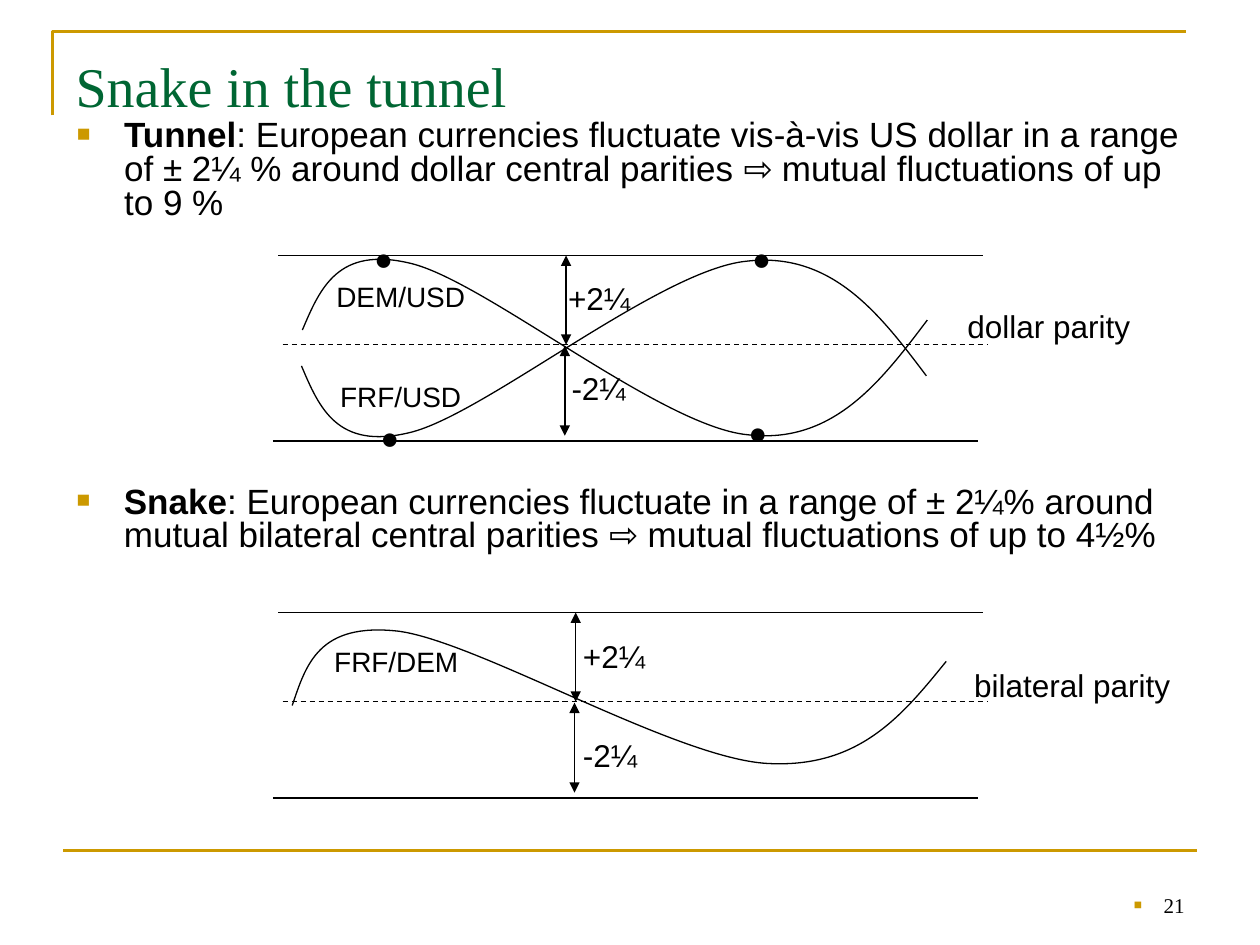
from lxml import etree
from pptx import Presentation
from pptx.dml.color import RGBColor
from pptx.enum import dml, shapes, text
from pptx.oxml.ns import qn
from pptx.util import Pt

GOLD = RGBColor(0xCC, 0x99, 0x00)
GREEN = RGBColor(0x00, 0x66, 0x33)
BLACK = RGBColor(0, 0, 0)
SANS, SERIF = "Arial", "Times New Roman"
LEFT, MID, RIGHT = text.PP_ALIGN.LEFT, text.PP_ALIGN.CENTER, text.PP_ALIGN.RIGHT
TOP, BASE = text.MSO_ANCHOR.TOP, text.MSO_ANCHOR.BOTTOM

WAVE = [(16.8, 42.6), (26.9, 18.9), (37, -5.6), (78.7, 4.5), (121.2, 14.6),
        (221.3, 97.4), (271, 102.4), (319.9, 108.2), (347.3, 72.2), (373.9, 36.9)]
FLIP = [(x - 0.5, 105.7 - y) for x, y in WAVE]
SNAKE = [(11, 53.2), (19, 29.4), (26.2, 5.7), (71.5, 10.7), (116.9, 16.5),
         (229.9, 83.4), (282.5, 86.3), (335, 89.2), (359.5, 59), (384.7, 28)]
DOTS = [(27.6, -2), (31.2, 100.2), (243.6, -2), (241.4, 97.4)]


def style(par, size, color=BLACK, face=SANS, align=LEFT, gap=0, lead=1.0):
    """Set the font and spacing of one paragraph."""
    font = par.font
    font.size, font.name, font.color.rgb = Pt(size), face, color
    par.alignment, par.line_spacing = align, lead
    par.space_before = Pt(gap)


def bullet(par, hang):
    """Give a paragraph a small gold square on a hanging indent."""
    props = par._p.get_or_add_pPr()
    props.set("marL", str(Pt(hang)))
    props.set("indent", str(-Pt(hang)))
    tint = etree.SubElement(props, qn("a:buClr"))
    etree.SubElement(tint, qn("a:srgbClr"), val=str(GOLD))
    etree.SubElement(props, qn("a:buSzPct"), val="65000")
    etree.SubElement(props, qn("a:buFont"), typeface=SANS)
    etree.SubElement(props, qn("a:buChar"), char="■")
    for font in props.findall(qn("a:defRPr")):
        props.append(font)


def place(shape, box, anchor=TOP):
    """Move a text shape to its box and return its frame."""
    shape.left, shape.top, shape.width, shape.height = map(Pt, box)
    frame = shape.text_frame
    frame.word_wrap, frame.auto_size = True, text.MSO_AUTO_SIZE.NONE
    frame.vertical_anchor = anchor
    return frame


def label(slide, box, words, size=18, **look):
    """Add a text box with one styled paragraph."""
    frame = place(slide.shapes.add_textbox(0, 0, 0, 0), box, look.pop("anchor", TOP))
    par = frame.paragraphs[0]
    par.text = words
    style(par, size, **look)
    return par


def rule(slide, start, end, color=BLACK, width=0.75, dash=False, arrows=False):
    """Add a straight line, dashed or with arrowheads at both ends."""
    line = slide.shapes.add_connector(shapes.MSO_CONNECTOR.STRAIGHT,
                                      *map(Pt, start + end))
    line.line.color.rgb, line.line.width = color, Pt(width)
    if dash:
        line.line.dash_style = dml.MSO_LINE.DASH
    if arrows:
        for tag in ("a:headEnd", "a:tailEnd"):
            etree.SubElement(line.line._get_or_add_ln(), qn(tag), type="triangle")
    etree.SubElement(line._element.spPr, qn("a:effectLst"))


def outline(slide, points, color=BLACK, width=0.75, curved=False):
    """Draw an open path, as lines or as cubic curves."""
    pen = slide.shapes.build_freeform(*map(Pt, points[0]))
    pen.add_line_segments([(Pt(x), Pt(y)) for x, y in points[1:]], close=False)
    shape = pen.convert_to_shape()
    shape.shadow.inherit = False
    shape.fill.background()
    shape.line.color.rgb, shape.line.width = color, Pt(width)
    if curved:
        steps = list(shape._element.iter(qn("a:lnTo")))
        for i in range(0, len(steps), 3):
            steps[i].tag = qn("a:cubicBezTo")
            for step in steps[i + 1:i + 3]:
                steps[i].append(step[0])
                step.getparent().remove(step)


def item(shape, box, term, words):
    """Fill a shape with a bulleted definition."""
    par = place(shape, box).paragraphs[0]
    style(par, 20, gap=2, lead=0.8)
    bullet(par, 27)
    par.add_run().text = term
    par.runs[0].font.bold = True
    par.add_run().text = words
    par.runs[1].font.bold = False


def band(slide, left, top, axis, waves, names, marks, parity, dots=()):
    """Draw a fluctuation band with its curves, arrows and labels."""
    def at(x, y):
        return left + x, top + y

    for x, y in ((3, 0), (5.5, 51), (0, 106)):
        rule(slide, at(x, y), at(x + 403, y), dash=y == 51)
    for x, low, high in ((axis, 0, 51), (axis - 0.7, 51.5, 103)):
        rule(slide, at(x, low), at(x, high), arrows=True)
    for wave in waves:
        outline(slide, [at(*point) for point in wave], curved=True)
    for words, spot in zip(("+2¼", "-2¼"), marks):
        label(slide, at(*spot) + (57, 29), words, gap=2)
    tight = dict(align=MID, gap=2, lead=0.4)
    for spot in dots:
        label(slide, at(*spot) + (71.3, 16), "●", **tight)
    for words, spot in names:
        label(slide, at(*spot) + (108, 16.5), words, 16, **tight)
    words, y, width = parity
    label(slide, at(385, y) + (width, 18), words, **tight)


def frame(slide, wide, high):
    """Draw the gold rules and the page number."""
    outline(slide, [(30, 66), (30, 18), (wide - 42, 18)], GOLD, 1.5)
    rule(slide, (36, high - 54), (wide - 36, high - 54), GOLD, 1.5)
    number = label(slide, (wide - 204, high - 48, 168, 36), "21", 12,
                   face=SERIF, align=RIGHT, anchor=BASE)
    bullet(number, 17)


def main():
    """Build the slide and save it."""
    deck = Presentation()
    deck.slide_width, deck.slide_height = Pt(720), Pt(540)
    slide = deck.slides.add_slide(deck.slide_layouts[1])
    title, body = slide.placeholders
    frame(slide, 720, 540)
    head = place(title, (36, 21.6, 648, 49.7), BASE).paragraphs[0]
    head.text = "Snake in the tunnel"
    style(head, 32, GREEN, SERIF)
    item(body, (36.7, 65.5, 648, 67.7), "Tunnel",
         ": European currencies fluctuate vis-à-vis US dollar in a range of "
         "± 2¼ % around dollar central parities ⇨ mutual fluctuations of up to 9 %")
    item(slide.shapes.add_textbox(0, 0, 0, 0), (36.7, 275, 648, 57), "Snake",
         ": European currencies fluctuate in a range of ± 2¼% around "
         "mutual bilateral central parities ⇨ mutual fluctuations of up to 4½%")
    band(slide, 156, 146, 167.5, [WAVE, FLIP],
         [("DEM/USD", (19, 20.3)), ("FRF/USD", (19, 77.2))],
         [(161.5, 10), (163.5, 61.5)], ("dollar parity", 37, 116.6), DOTS)
    band(slide, 156, 350, 173, [SNAKE], [("FRF/DEM", (16.5, 24.4))],
         [(170, 10.7), (170, 67)], ("bilateral parity", 38, 143.3))
    deck.save("out.pptx")


if __name__ == "__main__":
    main()
